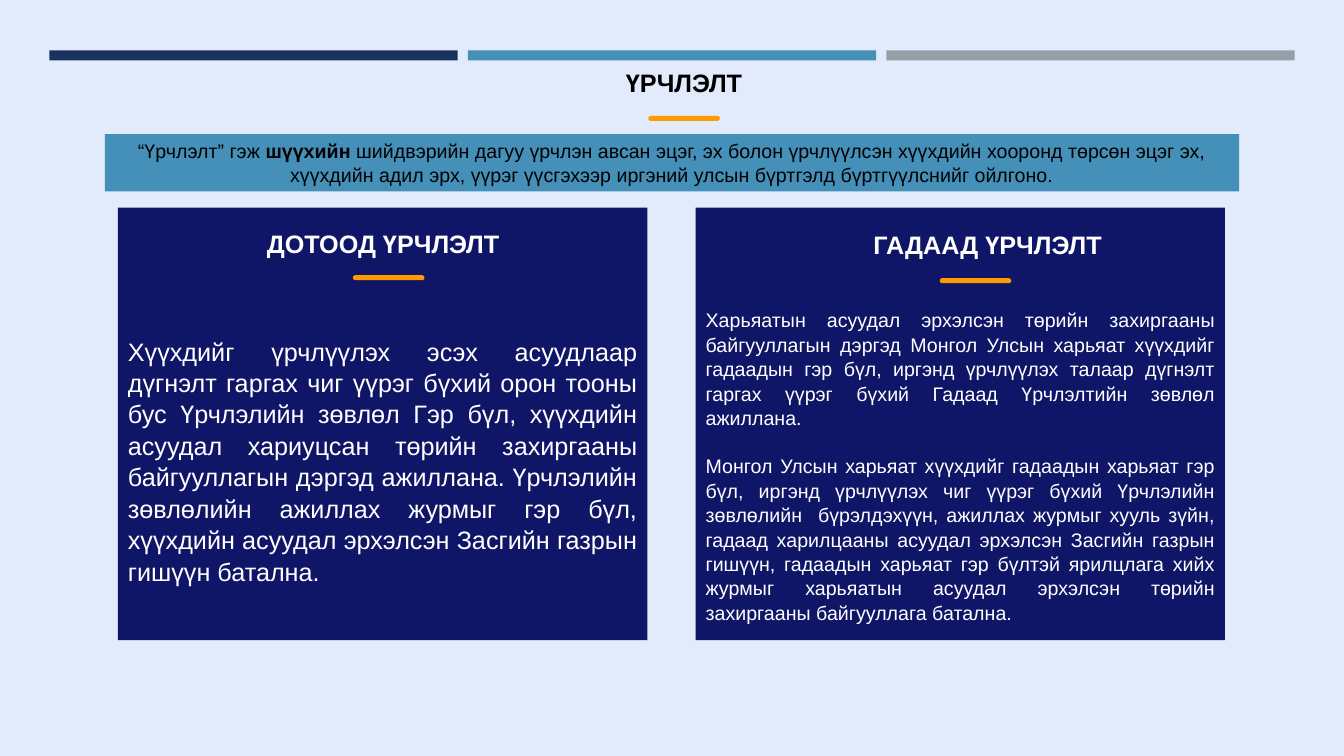
"""Build a slide on domestic and foreign adoption."""
from pptx import Presentation
from pptx.dml.color import RGBColor
from pptx.enum.shapes import MSO_SHAPE
from pptx.enum.text import MSO_ANCHOR, PP_ALIGN
from pptx.util import Inches, Pt

RECT, ROUND = MSO_SHAPE.RECTANGLE, MSO_SHAPE.ROUNDED_RECTANGLE
TOP, MIDDLE = MSO_ANCHOR.TOP, MSO_ANCHOR.MIDDLE
CENTER, JUSTIFY = PP_ALIGN.CENTER, PP_ALIGN.JUSTIFY
NAVY, BLUE, GRAY = "1A3260", "4590B8", "969FA7"
PANEL, ORANGE, PALE = "0F1667", "FF9A00", "E3EAFB"
WHITE, BLACK = "FFFFFF", "000000"

deck = Presentation()
deck.slide_width, deck.slide_height = Inches(13.33), Inches(7.5)
slide = deck.slides.add_slide(deck.slide_layouts[6])
slide.background.fill.solid()
slide.background.fill.fore_color.rgb = RGBColor.from_string(PALE)


def block(box, color, kind=RECT):
    shape = slide.shapes.add_shape(kind, *[Inches(v) for v in box])
    shape.shadow.inherit = False
    shape.fill.solid()
    shape.fill.fore_color.rgb = RGBColor.from_string(color)
    shape.line.fill.background()
    return shape


def write(shape, paras, size, color, align=CENTER, anchor=TOP, space=1.0, gap=0):
    frame = shape.text_frame
    frame.word_wrap = True
    frame.vertical_anchor = anchor
    for i, runs in enumerate(paras):
        para = frame.add_paragraph() if i else frame.paragraphs[0]
        para.alignment = align
        para.line_spacing = space
        para.space_before = Pt(gap if i else 0)
        for text, bold in runs:
            run = para.add_run()
            run.text = text
            run.font.name = "Arial"
            run.font.size = Pt(size)
            run.font.bold = bold
            run.font.color.rgb = RGBColor.from_string(color)


for i, color in enumerate((NAVY, BLUE, GRAY)):
    block((0.49 + 4.15 * i, 0.5, 4.05, 0.1), color)

panels = [
    (1.17, 1.26, 18, [
        "Хүүхдийг үрчлүүлэх эсэх асуудлаар дүгнэлт гаргах чиг үүрэг бүхий "
        "орон тооны бус Үрчлэлийн зөвлөл Гэр бүл, хүүхдийн асуудал хариуцсан "
        "төрийн захиргааны байгууллагын дэргэд ажиллана. Үрчлэлийн зөвлөлийн "
        "ажиллах журмыг гэр бүл, хүүхдийн асуудал эрхэлсэн Засгийн газрын "
        "гишүүн батална."]),
    (6.9, 0.99, 14, [
        "Харьяатын асуудал эрхэлсэн төрийн захиргааны байгууллагын дэргэд "
        "Монгол Улсын харьяат хүүхдийг гадаадын гэр бүл, иргэнд үрчлүүлэх "
        "талаар дүгнэлт гаргах үүрэг бүхий Гадаад Үрчлэлтийн зөвлөл ажиллана.",
        "Монгол Улсын харьяат хүүхдийг гадаадын харьяат гэр бүл, иргэнд "
        "үрчлүүлэх чиг үүрэг бүхий Үрчлэлийн зөвлөлийн  бүрэлдэхүүн, ажиллах "
        "журмыг хууль зүйн, гадаад харилцааны асуудал эрхэлсэн Засгийн газрын "
        "гишүүн, гадаадын харьяат гэр бүлтэй ярилцлага хийх журмыг харьяатын "
        "асуудал эрхэлсэн төрийн захиргааны байгууллага батална."]),
]
for left, inset, size, texts in panels:
    panel = block((left, 2.06, 5.25, 4.29), PANEL)
    panel.text_frame.margin_top = Inches(inset)
    write(panel, [[(text, False)] for text in texts], size, WHITE,
          JUSTIFY, space=1.04, gap=16.8)

heads = [
    ("ҮРЧЛЭЛТ", (6.0, 0.62, 1.57, 0.4), BLACK, (6.43, 1.15)),
    ("ДОТООД ҮРЧЛЭЛТ", (2.51, 2.22, 2.58, 0.4), WHITE, (3.5, 2.73)),
    ("ГАДААД ҮРЧЛЭЛТ", (8.45, 2.23, 2.69, 0.4), WHITE, (9.32, 2.76)),
]
for text, box, color, spot in heads:
    head = slide.shapes.add_textbox(*[Inches(v) for v in box])
    write(head, [[(text, True)]], 18, color)
    bar = block((*spot, 0.71, 0.05), ORANGE, ROUND)
    bar.adjustments[0] = 0.5

banner = block((1.04, 1.33, 11.25, 0.57), BLUE)
write(banner, [[
    ("“Үрчлэлт” гэж ", False),
    ("шүүхийн", True),
    (" шийдвэрийн дагуу үрчлэн авсан эцэг, эх болон үрчлүүлсэн хүүхдийн "
     "хооронд төрсөн эцэг эх, хүүхдийн адил эрх, үүрэг үүсгэхээр иргэний "
     "улсын бүртгэлд бүртгүүлснийг ойлгоно.", False),
]], 14, BLACK, anchor=MIDDLE)

deck.save("out.pptx")
